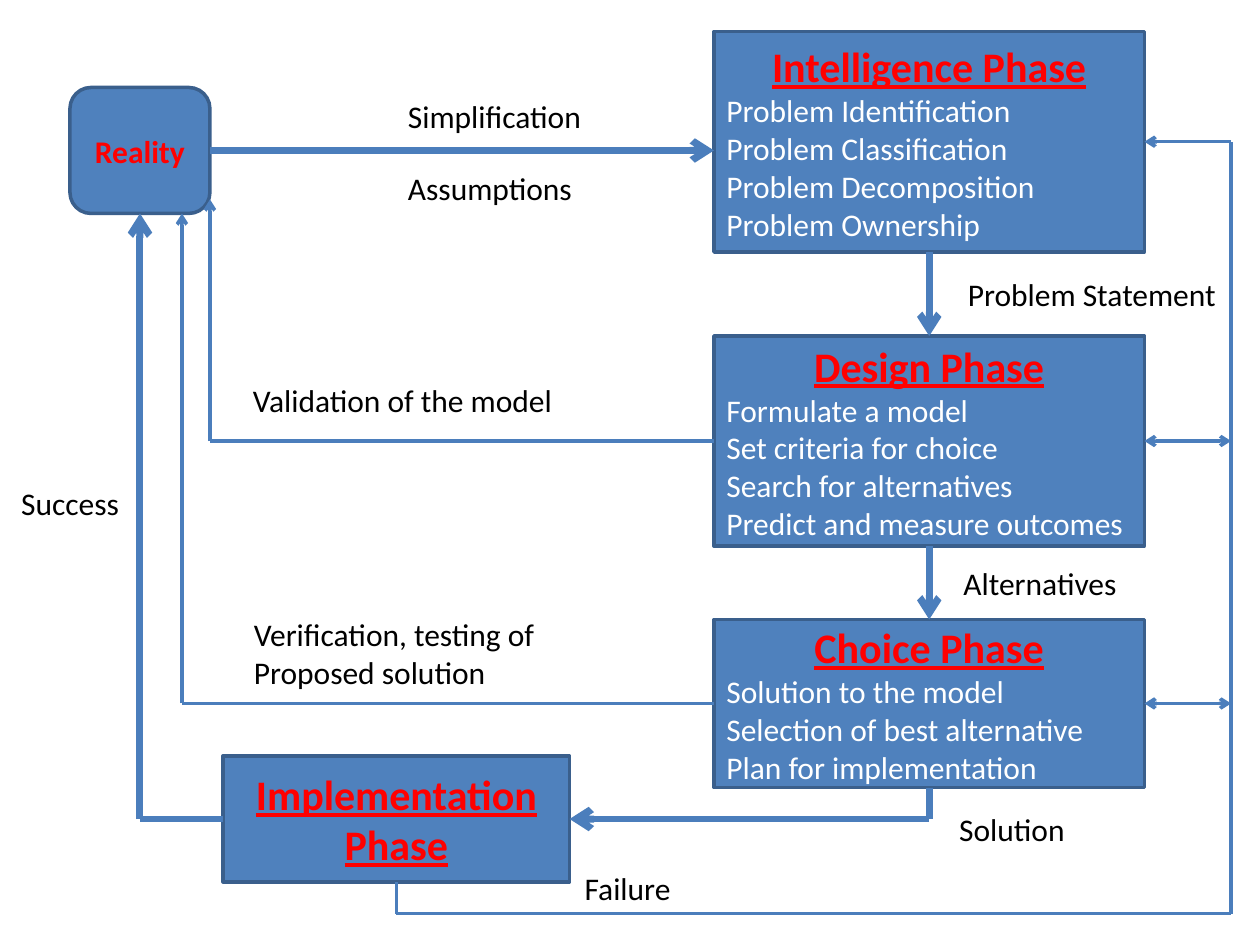
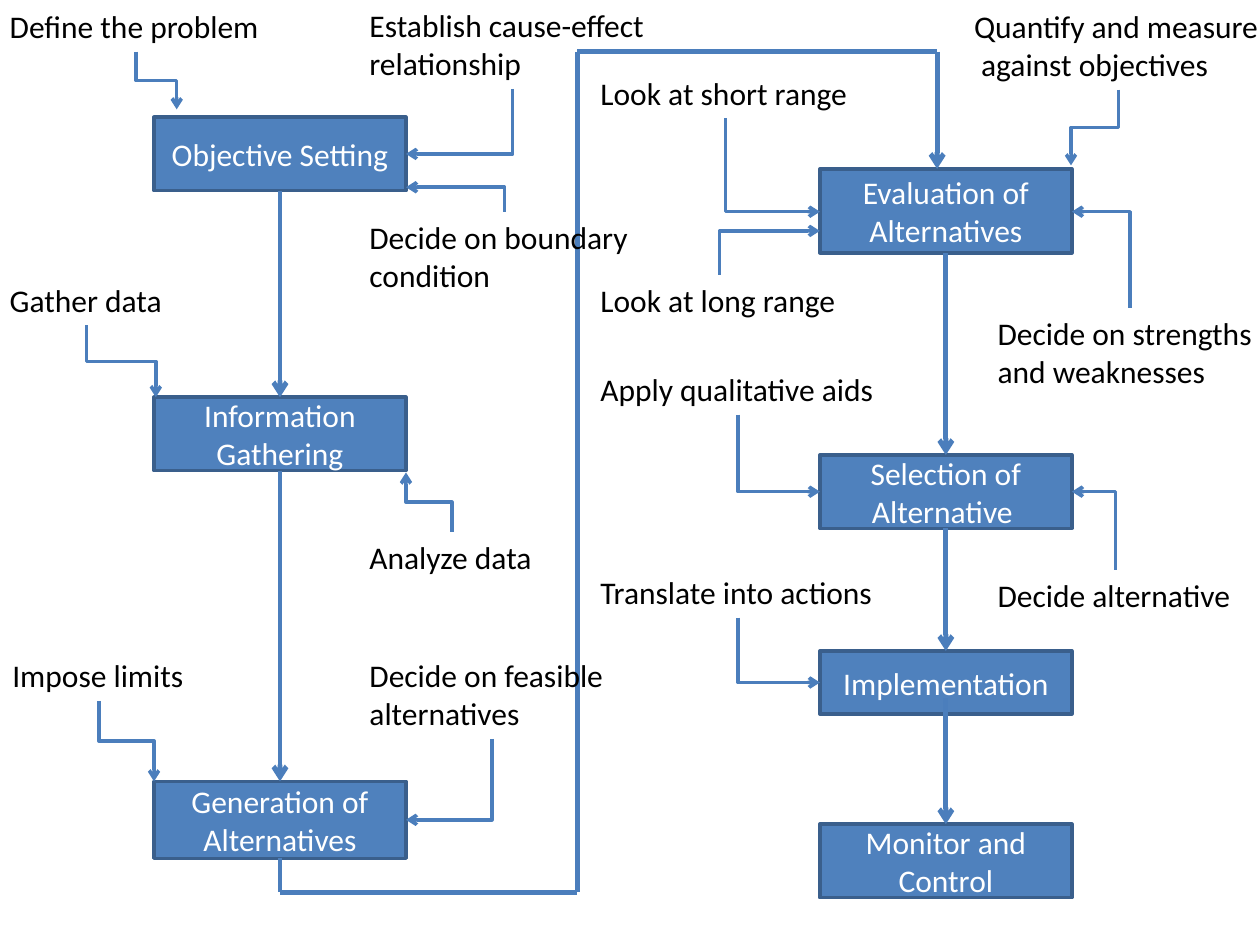
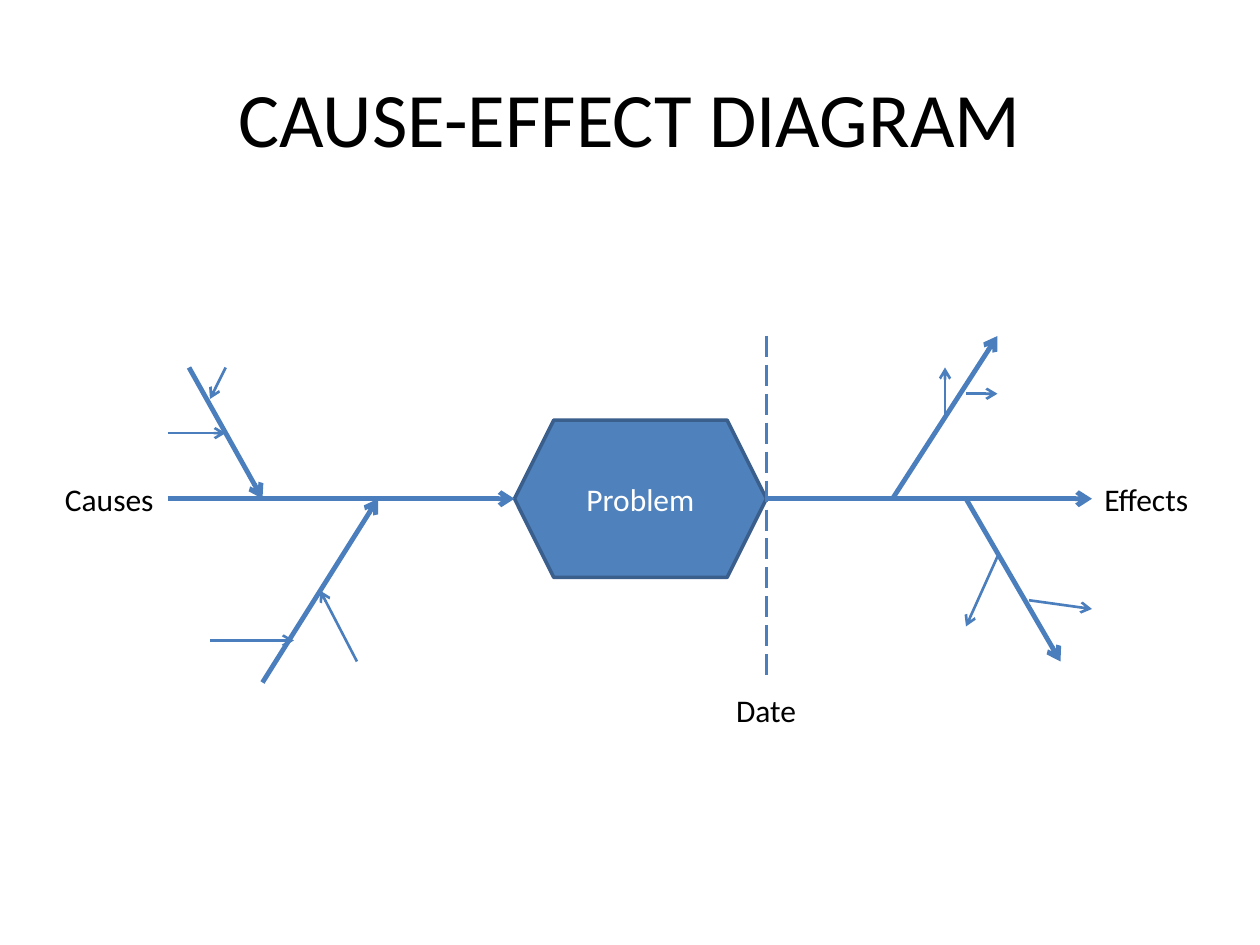
"""Build three slides on decision phases, decision steps and causes."""
from dataclasses import dataclass

import pptx
import pptx.util
from lxml import etree
from pptx.dml.color import RGBColor
from pptx.enum.dml import MSO_LINE
from pptx.enum.shapes import MSO_CONNECTOR, MSO_SHAPE
from pptx.enum.text import MSO_ANCHOR, MSO_AUTO_SIZE, PP_ALIGN
from pptx.oxml.ns import qn

Pt = pptx.util.Pt
TOP, LEFT, BOTTOM, RIGHT = range(4)


@dataclass(frozen=True)
class Theme:
    """Hold the colours, type sizes and line widths."""
    font: str = "Calibri"
    fill: RGBColor = RGBColor(0x4F, 0x81, 0xBD)
    edge: RGBColor = RGBColor(0x3A, 0x5F, 0x8C)
    wire: RGBColor = RGBColor(0x4B, 0x7E, 0xBC)
    red: RGBColor = RGBColor(0xFF, 0, 0)
    white: RGBColor = RGBColor(0xFF, 0xFF, 0xFF)
    black: RGBColor = RGBColor(0, 0, 0)
    title: float = 44
    head: float = 24
    body: float = 18
    heavy: float = 4
    medium: float = 2.75
    light: float = 2
    fine: float = 1.5


THEME = Theme()


def style(para, size, color, align=PP_ALIGN.LEFT, strong=False, under=False):
    """Set the font and alignment of a paragraph."""
    para.alignment = align
    font = para.font
    font.name, font.size = THEME.font, Pt(size)
    font.bold, font.underline = strong, under
    font.color.rgb = color


def fill_rows(frame, rows):
    """Write one paragraph for each text, and return the paragraphs."""
    paras = [frame.paragraphs[0]] + [frame.add_paragraph() for _ in rows[1:]]
    for para, row in zip(paras, rows):
        para.add_run().text = row
    return paras


def add_box(slide, area, kind=MSO_SHAPE.RECTANGLE):
    """Add a filled shape with an edge."""
    box = slide.shapes.add_shape(kind, *map(Pt, area))
    box.shadow.inherit = False
    box.fill.solid()
    box.fill.fore_color.rgb = THEME.fill
    box.line.color.rgb = THEME.edge
    box.line.width = Pt(THEME.light)
    box.text_frame.vertical_anchor = MSO_ANCHOR.MIDDLE
    return box


def add_step(slide, area, text, kind=MSO_SHAPE.RECTANGLE, color=THEME.white, strong=False):
    """Add a shape with one centred text."""
    box = add_box(slide, area, kind)
    para, = fill_rows(box.text_frame, [text])
    style(para, THEME.body, color, PP_ALIGN.CENTER, strong)
    return box


def add_phase(slide, area, head, *rows):
    """Add a box with a red heading and plain rows."""
    box = add_box(slide, area)
    first, *rest = fill_rows(box.text_frame, [head, *rows])
    style(first, THEME.head, THEME.red, PP_ALIGN.CENTER, True, True)
    for para in rest:
        style(para, THEME.body, THEME.white)
    return box


def add_label(slide, x, y, width, *rows):
    """Add a text box that fits its rows."""
    label = slide.shapes.add_textbox(Pt(x), Pt(y), Pt(width), Pt(7.2 + 21.8 * len(rows)))
    label.text_frame.word_wrap = False
    label.text_frame.auto_size = MSO_AUTO_SIZE.SHAPE_TO_FIT_TEXT
    for para in fill_rows(label.text_frame, rows):
        style(para, THEME.body, THEME.black)
    return label


def dress(wire, width, tips):
    """Colour a connector and give it arrow tips."""
    wire.line.color.rgb = THEME.wire
    wire.line.width = Pt(width)
    props = wire._element.spPr
    for tip in tips:
        etree.SubElement(props.find(qn("a:ln")), qn(f"a:{tip}End"), type="arrow")
    etree.SubElement(props, qn("a:effectLst"))


def add_line(slide, start, end, width, tips=("tail",)):
    """Draw a line between points or (box, side) pairs."""
    joins = [not isinstance(spot[0], (int, float)) for spot in (start, end)]
    points = [(0, 0) if join else spot for join, spot in zip(joins, (start, end))]
    wire = slide.shapes.add_connector(
        MSO_CONNECTOR.STRAIGHT, *(Pt(value) for point in points for value in point))
    if joins[0]:
        wire.begin_connect(*start)
    if joins[1]:
        wire.end_connect(*end)
    dress(wire, width, tips)
    return wire


def add_route(slide, spots, width, tips=("tail",)):
    """Draw lines through the spots, with tips on the last."""
    pairs = list(zip(spots, spots[1:]))
    for start, end in pairs[:-1]:
        add_line(slide, start, end, width, ())
    add_line(slide, *pairs[-1], width, tips)


def add_elbow(slide, start, end, bends):
    """Draw an elbow arrow that leaves its start upright."""
    (x1, y1), (x2, y2) = start, end
    right, up = x2 > x1, y2 < y1
    mid_x, mid_y = (x1 + x2) / 2, (y1 + y2) / 2
    half_x = abs(y2 - y1) / 2 * (1 if right else -1)
    half_y = abs(x2 - x1) / 2 * (1 if up else -1)
    wire = slide.shapes.add_connector(
        MSO_CONNECTOR.ELBOW, Pt(mid_x + half_x), Pt(mid_y + half_y),
        Pt(mid_x - half_x), Pt(mid_y - half_y))
    props = wire._element.spPr
    props.find(qn("a:xfrm")).set("rot", str((90 if right == up else 270) * 60000))
    props.find(qn("a:prstGeom")).set("prst", f"bentConnector{bends + 1}")
    dress(wire, THEME.light, ["tail"])


def add_note(slide, x, y, width, rows, end, bends):
    """Add a label and an elbow from its middle to the end."""
    add_label(slide, x, y, width, *rows)
    edge = y + 7.2 + 21.8 * len(rows) if end[1] > y else y
    add_elbow(slide, (x + width / 2, edge), end, bends)


def draw_phases(slide):
    """Draw the phases of a decision and their feedback."""
    heavy, light = THEME.heavy, THEME.light
    scan = add_phase(slide, (408, 18, 246, 126), "Intelligence Phase",
                     "Problem Identification", "Problem Classification",
                     "Problem Decomposition", "Problem Ownership")
    design = add_phase(slide, (408, 192, 246, 120), "Design Phase",
                       "Formulate a model", "Set criteria for choice",
                       "Search for alternatives", "Predict and measure outcomes")
    choice = add_phase(slide, (408, 354, 246, 96), "Choice Phase",
                       "Solution to the model", "Selection of best alternative",
                       "Plan for implementation")
    action = add_phase(slide, (127.5, 432, 198, 72), "Implementation Phase")
    real = add_step(slide, (40, 50, 80, 72), "Reality",
                    MSO_SHAPE.ROUNDED_RECTANGLE, THEME.red, True)

    add_line(slide, (real, RIGHT), (408, 86), heavy)
    add_line(slide, (scan, BOTTOM), (design, TOP), heavy)
    add_line(slide, (design, BOTTOM), (choice, TOP), heavy)
    add_route(slide, [(choice, BOTTOM), (531, 468), (action, RIGHT)], heavy)
    add_route(slide, [(action, LEFT), (80, 468), (real, BOTTOM)], heavy)
    add_route(slide, [(action, BOTTOM), (226.5, 522), (703.5, 522),
                      (703.5, 81), (scan, RIGHT)], light)
    for box, y, x, tip in ((design, 252, 120, 114), (choice, 402, 104, 122)):
        add_line(slide, (box, RIGHT), (703.5, y), light, ("head", "tail"))
        add_route(slide, [(box, LEFT), (x, y), (x, tip)], light)

    for label in (
        (226, 52, 114.5, "Simplification"),
        (226, 93, 109.5, "Assumptions"),
        (546, 153.5, 157.5, "Problem Statement"),
        (543.5, 319, 103, "Alternatives"),
        (541, 459.5, 75.5, "Solution"),
        (327, 493, 64, "Failure"),
        (5, 273, 71, "Success"),
        (137.5, 214, 188, "Validation of the model"),
        (138, 348, 177, "Verification, testing of", "Proposed solution"),
    ):
        add_label(slide, *label)


def draw_steps(slide):
    """Draw the steps of a decision with notes beside them."""
    def column(x, rows):
        """Stack the steps of one column."""
        return [add_step(slide, (x, y, 144, height), text) for y, height, text in rows]

    goal, facts, ideas = column(88, (
        (67, 42, "Objective Setting"),
        (227, 42, "Information Gathering"),
        (446.5, 44, "Generation of Alternatives"),
    ))
    weigh, select, action, watch = column(468.5, (
        (96.5, 48, "Evaluation of Alternatives"),
        (260, 42, "Selection of Alternative "),
        (372, 36, "Implementation"),
        (471, 42, "Monitor and Control"),
    ))
    for start, end in ((goal, facts), (facts, ideas), (weigh, select), (select, action)):
        add_line(slide, (start, BOTTOM), (end, TOP), THEME.medium)
    add_line(slide, (540.5, 399), (watch, TOP), THEME.medium)
    add_route(slide, [(ideas, BOTTOM), (160, 510), (330, 510), (330, 29.5),
                      (535.5, 29.5), (535.5, 96.5)], THEME.medium)

    for note in (
        (-1.5, 0.5, 158.5, ["Define the problem"], (101, 62.5), 2),
        (-1.5, 157, 102, ["Gather data"], (89, 227), 2),
        (0, 371.5, 113, ["Impose limits"], (88, 446.5), 2),
        (204, 0, 178, ["Establish cause-effect", "relationship"], (232, 88), 1),
        (204, 121, 168.5, ["Decide on boundary", "condition"], (232, 107), 1),
        (204, 304, 108.5, ["Analyze data"], (232, 270), 2),
        (204, 371.5, 154, ["Decide on feasible", "alternatives"], (232, 468.5), 1),
        (336, 38.5, 157, ["Look at short range"], (468.5, 121), 1),
        (336, 157, 150.5, ["Look at long range"], (468.5, 132), 1),
        (336, 208, 171.5, ["Apply qualitative aids"], (468.5, 281), 1),
        (336, 324, 171.5, ["Translate into actions"], (468.5, 390), 1),
        (549.5, 0.5, 179, ["Quantify and measure", " against objectives"], (612, 94.5), 2),
        (563, 176, 165.5, ["Decide on strengths", "and weaknesses"], (612.5, 121), 1),
        (563, 325.5, 149, ["Decide alternative"], (612.5, 281), 1),
    ):
        add_note(slide, *note)


def draw_causes(slide):
    """Draw the problem between its causes and effects."""
    title = slide.shapes.title
    title.left, title.top, title.width, title.height = map(Pt, (36, 21.5, 648, 90))
    title.text_frame.vertical_anchor = MSO_ANCHOR.MIDDLE
    para, = fill_rows(title.text_frame, ["CAUSE-EFFECT DIAGRAM"])
    style(para, THEME.title, THEME.black, PP_ALIGN.CENTER)

    add_step(slide, (294, 240, 144, 90), "Problem", MSO_SHAPE.HEXAGON)
    bones = (
        ((96, 285), (294, 285)), ((438, 285), (624, 285)),
        ((108, 210), (150, 285)), ((150, 390), (216, 285)),
        ((510, 285), (570, 192)), ((552, 285), (606, 378)),
    )
    twigs = (
        ((96, 247.5), (129, 247.5)), ((129, 210), (120, 228)),
        ((120, 366), (168, 366)), ((204, 378), (183, 337.5)),
        ((540, 240), (540, 210)), ((552, 225), (570, 225)),
        ((570, 318), (552, 358)), ((588, 343), (624, 348)),
    )
    for width, wires in ((THEME.medium, bones), (THEME.fine, twigs)):
        for start, end in wires:
            add_line(slide, start, end, width)
    date = add_line(slide, (438, 192), (438, 390), THEME.fine, ())
    date.line.dash_style = MSO_LINE.LONG_DASH
    for label in ((30, 270.5, 65.5, "Causes"), (413.5, 391.5, 49, "Date"),
                  (624, 270.5, 63.5, "Effects")):
        add_label(slide, *label)


def main():
    """Build the slides and save them."""
    deck = pptx.Presentation()
    deck.slide_width, deck.slide_height = Pt(720), Pt(540)
    plain, titled = deck.slide_layouts[6], deck.slide_layouts[5]
    for draw, layout in ((draw_phases, plain), (draw_steps, plain), (draw_causes, titled)):
        draw(deck.slides.add_slide(layout))
    deck.save("out.pptx")


if __name__ == "__main__":
    main()
